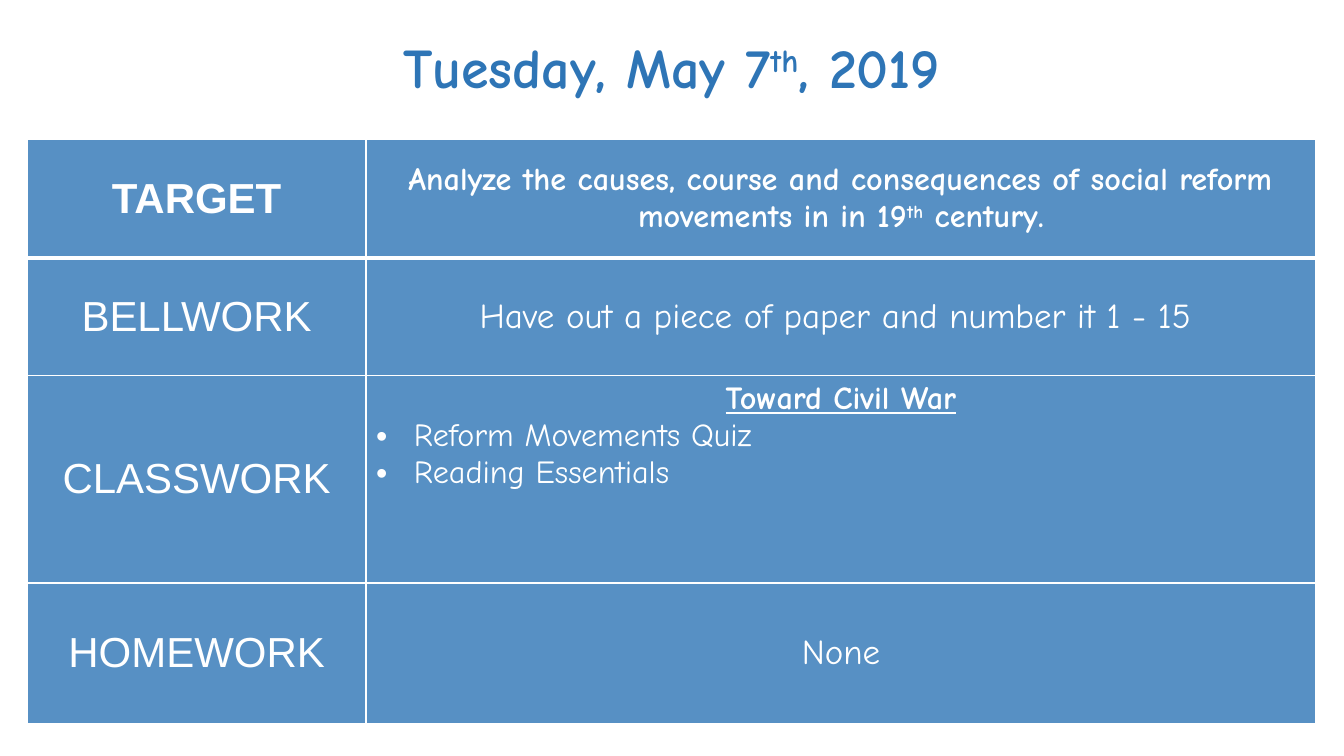
from lxml.etree import SubElement
from pptx import Presentation
from pptx.dml.color import RGBColor
from pptx.enum.text import MSO_ANCHOR, MSO_AUTO_SIZE, PP_ALIGN
from pptx.oxml.ns import qn
from pptx.util import Pt

BLUE = RGBColor(0x2E, 0x75, 0xB6)
WHITE = RGBColor(0xFF, 0xFF, 0xFF)
LABEL_FONT = "Arial"
TEXT_FONT = "Comic Neue"
LEFT, WIDTH = 19.5, 920.5
COLUMN_WIDTHS = (242, 678.5)
ROW_HEIGHTS = (85, 83.5, 148.5, 100.5)
BULLET_INDENT = Pt(27)

AGENDA = [
    ("TARGET", ["Analyze the causes, course and consequences of social reform movements in in 19|th| century."], 23),
    ("BELLWORK", ["Have out a piece of paper and number it 1 - 15 "], 25),
    ("CLASSWORK", ["Toward Civil War", "Reform Movements Quiz", "Reading Essentials"], 23),
    ("HOMEWORK", ["None"], 25),
]


def write_text(para, text, font, size, color, bold):
    para.alignment = PP_ALIGN.CENTER
    for position, piece in enumerate(text.split("|")):
        span = para.add_run()
        span.text = piece
        span.font.name = font
        span.font.size = Pt(size)
        span.font.bold = bold
        span.font.color.rgb = color
        if position % 2:
            span._r.get_or_add_rPr().set("baseline", "30000")


def fill_clear(fill, properties, color, percent):
    fill.solid()
    fill.fore_color.rgb = color
    tint = properties.find(qn("a:solidFill")).find(qn("a:srgbClr"))
    SubElement(tint, qn("a:alpha"), val=str(percent * 1000))


deck = Presentation()
deck.slide_width, deck.slide_height = Pt(960), Pt(540)
page = deck.slides.add_slide(deck.slide_layouts[5])

title = page.shapes.title
title.left, title.top, title.width, title.height = Pt(LEFT), Pt(11.5), Pt(WIDTH), Pt(72)
fill_clear(title.fill, title._element.spPr, WHITE, 65)
title.text_frame.word_wrap = True
title.text_frame.auto_size = MSO_AUTO_SIZE.NONE
title.text_frame.vertical_anchor = MSO_ANCHOR.MIDDLE
write_text(title.text_frame.paragraphs[0], "Tuesday, May 7|th|, 2019", TEXT_FONT, 40, BLUE, True)

table = page.shapes.add_table(
    len(AGENDA), 2, Pt(LEFT), Pt(99.5), Pt(WIDTH), Pt(sum(ROW_HEIGHTS))
).table
for column, width in zip(table.columns, COLUMN_WIDTHS):
    column.width = Pt(width)

for index, (label, lines, size) in enumerate(AGENDA):
    table.rows[index].height = Pt(ROW_HEIGHTS[index])
    label_cell, text_cell = table.cell(index, 0), table.cell(index, 1)

    for cell in (label_cell, text_cell):
        cell.vertical_anchor = MSO_ANCHOR.MIDDLE
        properties = cell._tc.get_or_add_tcPr()
        for side in ("lnL", "lnR", "lnT", "lnB"):
            heavy = (index, side) in ((0, "lnB"), (1, "lnT"))
            border = SubElement(properties, qn(f"a:{side}"), w=str(Pt(3 if heavy else 1)))
            SubElement(SubElement(border, qn("a:solidFill")), qn("a:srgbClr"), val=str(WHITE))
        fill_clear(cell.fill, properties, BLUE, 80)

    write_text(label_cell.text_frame.paragraphs[0], label, LABEL_FONT, 30, WHITE, index == 0)

    is_list = len(lines) > 1
    if is_list:
        text_cell.vertical_anchor = MSO_ANCHOR.TOP
    for number, line in enumerate(lines):
        frame = text_cell.text_frame
        para = frame.add_paragraph() if number else frame.paragraphs[0]
        heading = is_list and number == 0
        write_text(para, line, TEXT_FONT, size, WHITE, index == 0 or heading)
        if heading:
            para.runs[0].font.underline = True
        if number:
            para.alignment = PP_ALIGN.LEFT
            layout = para._p.get_or_add_pPr()
            layout.set("marL", str(BULLET_INDENT))
            layout.set("indent", str(-BULLET_INDENT))
            SubElement(layout, qn("a:buFont"), typeface=LABEL_FONT)
            SubElement(layout, qn("a:buChar"), char="•")

deck.save("out.pptx")
